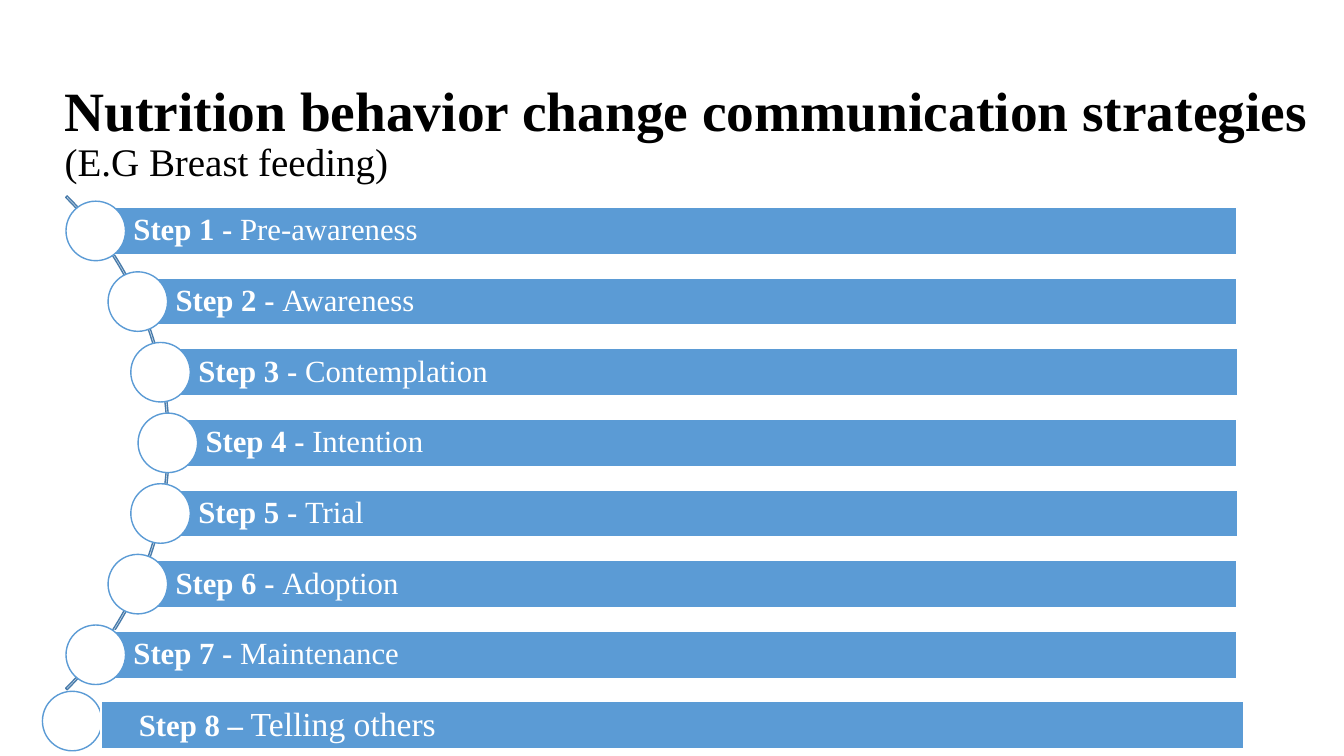
from math import sqrt
from pptx import Presentation
from pptx import util as u
from pptx.dml import color
from pptx.enum import shapes, text

HUES = {"ink": "000000", "white": "FFFFFF", "blue": "5B9BD5", "arc": "497CAB"}
KIND = shapes.MSO_SHAPE
STEPS = ["Pre-awareness", "Awareness", "Contemplation", "Intention",
         "Trial", "Adoption", "Maintenance"]
BAR, DOT, PITCH = 1.19, 1.5, 1.78


def hue(name):
    return color.RGBColor.from_string(HUES[name])


def add_run(para, words, size, ink, bold):
    run = para.add_run()
    run.text = words
    run.font.name = "Times New Roman"
    run.font.size = u.Pt(size)
    run.font.bold = bold
    run.font.color.rgb = hue(ink)


def add_form(slide, kind, box, fill, line):
    form = slide.shapes.add_shape(kind, *map(u.Cm, box))
    form.shadow.inherit = False
    if fill:
        form.fill.solid()
        form.fill.fore_color.rgb = hue(fill)
    else:
        form.fill.background()
    form.line.color.rgb = hue(line)
    form.line.width = u.Pt(1)
    return form


def set_frame(frame, left, edge, anchor):
    frame.word_wrap = True
    frame.margin_left = u.Cm(left)
    frame.margin_right = frame.margin_top = frame.margin_bottom = u.Cm(edge)
    frame.vertical_anchor = anchor


def add_title(slide, box):
    frame = slide.shapes.add_textbox(*map(u.Cm, box)).text_frame
    set_frame(frame, 0, 0, text.MSO_ANCHOR.TOP)
    head, sub = frame.paragraphs[0], frame.add_paragraph()
    add_run(head, "Nutrition behavior change communication strategies",
            39.6, "ink", True)
    add_run(sub, "(E.G Breast feeding)", 27.9, "ink", False)
    for para in (head, sub):
        para.line_spacing = 0.9


def add_bar(slide, box, label, name, size=22):
    bar = add_form(slide, KIND.RECTANGLE, box, "blue", "white")
    set_frame(bar.text_frame, 0.95, 0.15, text.MSO_ANCHOR.MIDDLE)
    para = bar.text_frame.paragraphs[0]
    para.alignment = text.PP_ALIGN.LEFT
    para.line_spacing = 0.9
    add_run(para, label, 22, "white", True)
    add_run(para, name, size, "white", False)


def add_dot(slide, x, y):
    box = (x - DOT / 2, y - DOT / 2, DOT, DOT)
    add_form(slide, KIND.OVAL, box, "white", "blue")


def add_steps(slide, box):
    left, top, wide, high = box
    mid_x, mid_y, right = left + wide / 2, top + high / 2, 31.18
    arc = add_form(slide, KIND.BLOCK_ARC, box, None, "arc")
    for i, value in enumerate((189, 27, 0.003)):
        arc.adjustments[i] = value
    for i, name in enumerate(STEPS):
        rise = (i - len(STEPS) // 2) * PITCH
        x = mid_x + sqrt((wide / 2 - 0.04) ** 2 - rise ** 2)
        y = mid_y + rise
        add_bar(slide, (x, y - BAR / 2, right - x, BAR),
                f"Step {i + 1} - ", name)
        add_dot(slide, x, y)


def add_last(slide, box):
    left, top, wide, high = box
    add_dot(slide, left + DOT / 2, top + DOT / 2)
    add_bar(slide, (left + 1.48, top + 0.26, wide - 1.48, BAR),
            "Step 8 – ", "Telling others", 24)


def main():
    deck = Presentation()
    deck.slide_width, deck.slide_height = u.Cm(33.87), u.Cm(19.05)
    slide = deck.slides.add_slide(deck.slide_layouts[6])
    add_title(slide, (1.63, 2.1, 32.2, 2.5))
    add_steps(slide, (-13.33, 2.36, 17.6, 17.6))
    add_last(slide, (1.07, 17.42, 30.28, 1.5))
    deck.save("out.pptx")


if __name__ == "__main__":
    main()
